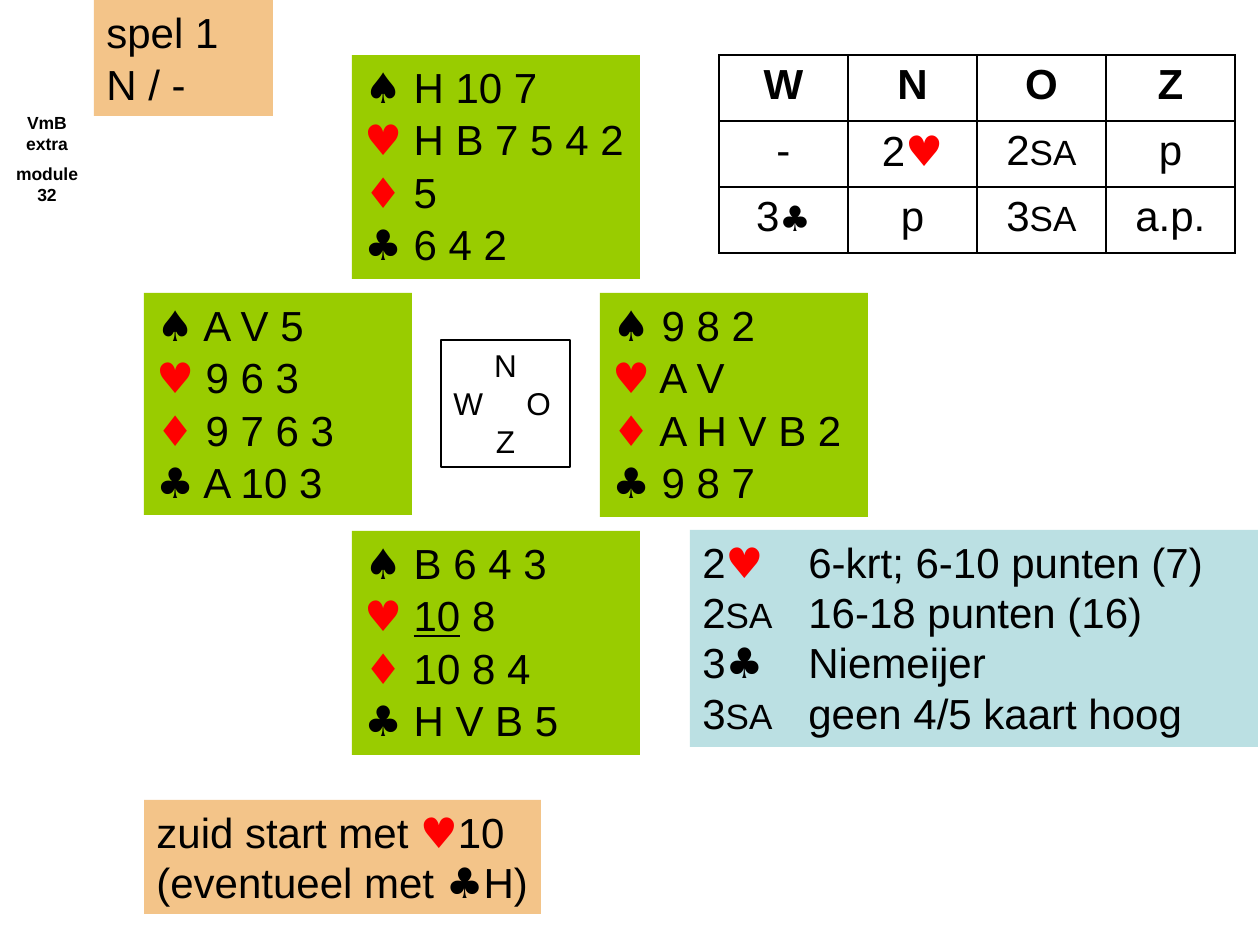
from itertools import groupby
from lxml.etree import SubElement as Sub
from pptx import Presentation
from pptx.dml.color import RGBColor
from pptx.enum.shapes import MSO_SHAPE as Shape
from pptx.enum.text import MSO_ANCHOR as Anchor, PP_ALIGN as Align
from pptx.oxml.ns import qn
from pptx.util import Pt

PX = 914400 // 126
BLACK, RED = "000000", "FF0000"
GREEN, SAND, BLUE = "99CC00", "F3C489", "BBE0E3"
SUITS = {"♠": BLACK, "♥": RED, "♦": RED, "♣": BLACK}

DEAL = ["spel 1", "N / -"]
HANDS = [
    ((352, 55, 288, 224), ["H 10 7", "H B 7 5 4 2", "5", "6 4 2"]),
    ((600, 293, 268, 224), ["9 8 2", "A V", "A H V B 2", "9 8 7"]),
    ((144, 293, 268, 222), ["A V 5", "9 6 3", "9 7 6 3", "A 10 3"]),
    ((352, 531, 288, 224), ["B 6 4 3", "_10_ 8", "10 8 4", "H V B 5"]),
]
BIDS = [
    ["W", "N", "O", "Z"],
    ["-", "2♥", "2^SA", "p"],
    ["3♣", "p", "3^SA", "a.p."],
]
CALLS = ["2♥", "2^SA", "3♣", "3^SA"]
NOTES = ["6-krt; 6-10 punten (7)", "16-18 punten (16)", "Niemeijer", "geen 4/5 kaart hoog"]
LEAD = ["zuid start met ♥10", "(eventueel met ♣H)"]
LABEL = ["VmB", "extra", "module 32"]


def px(*nums):
    return [n * PX for n in nums]


def color(code):
    return RGBColor.from_string(code)


def style(run, size, suit=None, bold=False, line=False):
    font = run.font
    font.name = "DejaVu Sans" if suit else "Arial"
    font.size = Pt(size)
    font.bold = bold
    font.underline = line
    font.color.rgb = color(SUITS.get(suit, BLACK))


def write(para, text, size, bold=False, small=24):
    for i, part in enumerate(text.split("_")):
        for j, piece in enumerate(part.split("^")):
            for suit, chars in groupby(piece, lambda c: c if c in SUITS else None):
                run = para.add_run()
                run.text = "".join(chars)
                high = 20 if j else small if suit else size
                style(run, high, suit, bold, i == 1)


def fill_text(frame, lines, size=24, gap=0, align=Align.LEFT, bold=False):
    frame.word_wrap = True
    frame.vertical_anchor = Anchor.TOP
    if align == Align.LEFT:
        frame.margin_right = 0
    for i, line in enumerate(lines):
        para = frame.paragraphs[0] if i == 0 else frame.add_paragraph()
        para.alignment = align
        para.space_before = Pt(gap if i else 0)
        write(para, line, size, bold, size)


def panel(slide, box, lines, fill=None, **kw):
    shape = slide.shapes.add_shape(Shape.RECTANGLE, *px(*box))
    shape.shadow.inherit = False
    if fill:
        shape.fill.solid()
        shape.fill.fore_color.rgb = color(fill)
        shape.line.fill.background()
    else:
        shape.fill.background()
        shape.line.color.rgb = color(BLACK)
        shape.line.width = Pt(0.75)
    fill_text(shape.text_frame, lines, **kw)


def compass(slide):
    box = slide.shapes.add_shape(Shape.RECTANGLE, *px(441, 340, 129, 127))
    box.shadow.inherit = False
    box.fill.background()
    box.line.color.rgb = color(BLACK)
    box.line.width = Pt(0.75)
    frame = box.text_frame
    frame.vertical_anchor = Anchor.TOP
    frame.word_wrap = True
    frame.text = "N\nW\tO\nZ"
    for para, align in zip(frame.paragraphs, [Align.CENTER, Align.LEFT, Align.CENTER]):
        para.alignment = align
        if align == Align.LEFT:
            tabs = Sub(para._p.get_or_add_pPr(), qn("a:tabLst"))
            Sub(tabs, qn("a:tab"), pos=str(73 * PX), algn="l")
        for run in para.runs:
            style(run, 18)


def border(cell):
    props = cell._tc.get_or_add_tcPr()
    for side in ("lnL", "lnR", "lnT", "lnB"):
        line = Sub(props, qn("a:" + side), w=str(Pt(1)))
        Sub(Sub(line, qn("a:solidFill")), qn("a:srgbClr"), val=BLACK)


def auction(slide):
    table = slide.shapes.add_table(3, 4, *px(719, 55, 516, 198)).table
    table.first_row = table.horz_banding = False
    for col in table.columns:
        col.width = 129 * PX
    for r, row in enumerate(BIDS):
        table.rows[r].height = 66 * PX
        for c, text in enumerate(row):
            cell = table.cell(r, c)
            border(cell)
            cell.fill.background()
            para = cell.text_frame.paragraphs[0]
            para.alignment = Align.CENTER
            write(para, text, 24, r == 0, 20 if "♣" in text else 24)


def main():
    deck = Presentation()
    deck.slide_width, deck.slide_height = px(1260, 945)
    slide = deck.slides.add_slide(deck.slide_layouts[6])
    panel(slide, (94, 0, 179, 116), DEAL, SAND, gap=1.2)
    compass(slide)
    for box, cards in HANDS:
        lines = [f"{suit} {held}" for suit, held in zip(SUITS, cards)]
        panel(slide, box, lines, GREEN, gap=1.2)
    auction(slide)
    panel(slide, (690, 530, 106, 217), CALLS, BLUE)
    panel(slide, (796, 530, 462, 217), NOTES, BLUE)
    panel(slide, (144, 800, 397, 114), LEAD, SAND)
    label = slide.shapes.add_textbox(*px(0, 106, 94, 108)).text_frame
    fill_text(label, LABEL, 10, align=Align.CENTER, bold=True)
    label.paragraphs[2].space_before = Pt(5)
    deck.save("out.pptx")


if __name__ == "__main__":
    main()
